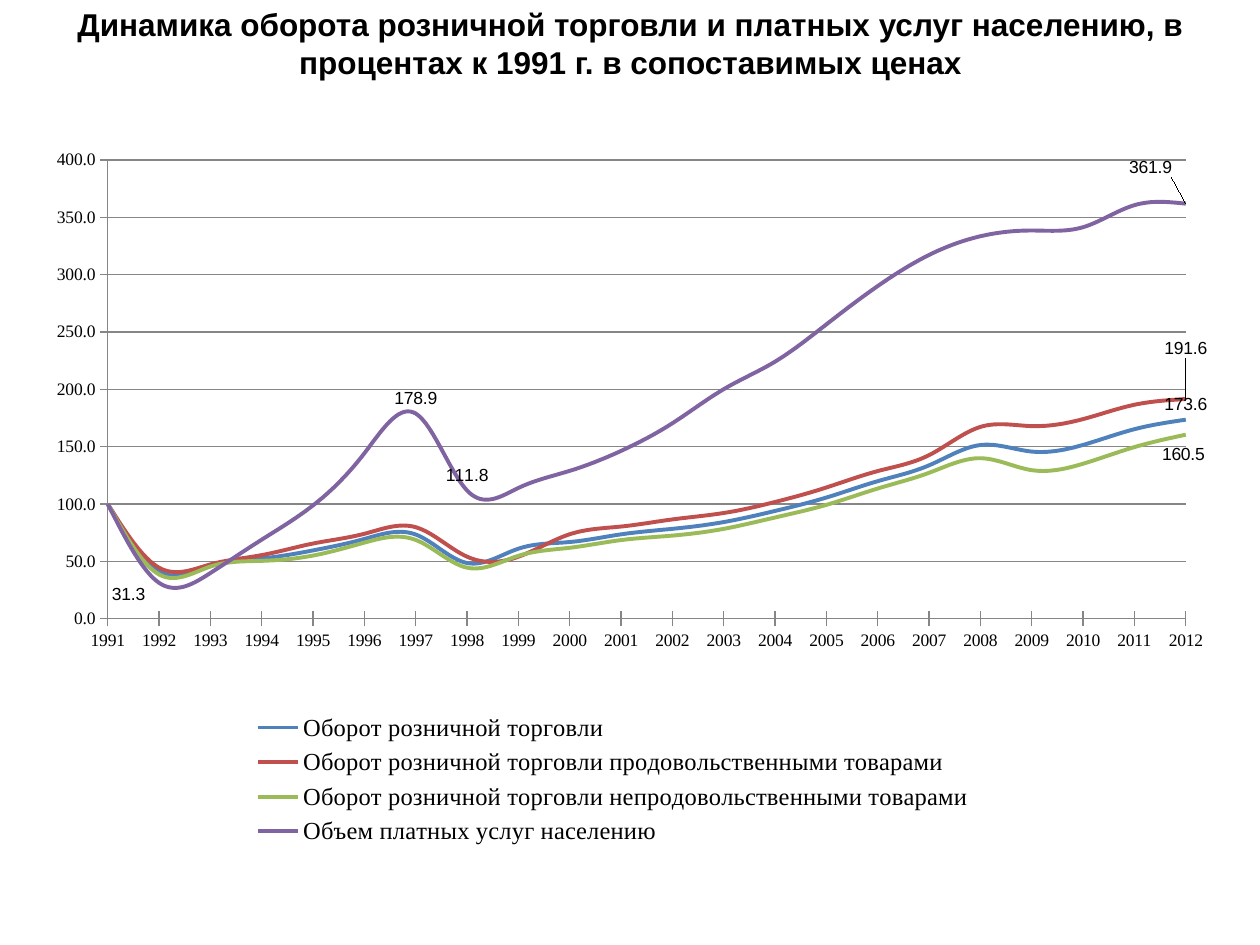
from lxml import etree
from pptx import Presentation, util as u
from pptx.chart.data import CategoryChartData
from pptx.dml.color import RGBColor
from pptx.enum import chart as ch, text
from pptx.oxml.ns import qn

HEADING = ("Динамика оборота розничной торговли и платных услуг населению, "
           "в процентах к 1991 г. в сопоставимых ценах")
YEARS = [str(year) for year in range(1991, 2013)]
ABOVE, BELOW = ch.XL_LABEL_POSITION.ABOVE, ch.XL_LABEL_POSITION.BELOW
INDICATORS = [
    {"name": "Оборот розничной торговли", "color": "4F81BD",
     "values": [100, 41.1, 46.3, 52.6, 59.6, 69.6, 73.4, 48.6, 61.1, 66.9, 73.6,
                78.4, 84.3, 94, 105.7, 120, 133.8, 151.5, 145.8, 151.6, 165.3, 173.6],
     "labels": {"2012": (ABOVE, 0, 0)}},
    {"name": "Оборот розничной торговли продовольственными товарами", "color": "C0504D",
     "values": [100, 44.5, 47.4, 55.5, 65.6, 74.1, 79.8, 54.1, 54.1, 73.7, 80.4,
                86.6, 92.2, 101.8, 114.5, 128.8, 142.7, 167.3, 168, 174.1, 186.6, 191.6],
     "labels": {"2012": (ABOVE, 0, -36)}},
    {"name": "Оборот розничной торговли непродовольственными товарами", "color": "9BBB59",
     "values": [100, 38.6, 45.5, 50.5, 55.1, 66.4, 68.7, 44.5, 54.9, 61.9, 68.6,
                72.5, 78.4, 88.3, 99.3, 113.6, 127.3, 140, 129.6, 135.2, 149.7, 160.5],
     "labels": {"2012": (BELOW, -3, 5)}},
    {"name": "Объем платных услуг населению", "color": "8064A2",
     "values": [100, 31.3, 39.9, 69, 98.9, 144.4, 178.9, 111.8, 114.1, 129, 146.4,
                170.5, 200.2, 224.2, 256.7, 290.1, 317.2, 333.5, 338.5, 341.4, 360.6, 361.9],
     "labels": {"1992": (BELOW, -30, -3), "1997": (ABOVE, 0, 0),
                "1998": (ABOVE, 0, 0), "2012": (ABOVE, -36, -21)}},
]
THEME = {
    "ink": "000000", "grid": "868686", "grid_width": 0.75, "curve_width": 2.25,
    "heading": {"name": "Arial", "size": u.Pt(18), "bold": True},
    "axis": {"name": "Times New Roman", "size": u.Pt(10)},
    "legend": {"name": "Times New Roman", "size": u.Pt(14)},
    "label": {"name": "Arial", "size": u.Pt(10)},
}
PX = u.Inches(1) // 126
SLIDE = (1260, 945)
HEADING_BOX = (25, -1, 1211, 89)
CHART_BOX = (15, 125, 1221, 745)
PLOT_BOX = (93, 35, 1078, 459)
LEGEND_BOX = (233, 582, 730, 145)


def apply(target, values):
    for key, value in values.items():
        setattr(target, key, value)


def style_font(font, role):
    apply(font, THEME[role])
    font.color.rgb = RGBColor.from_string(THEME["ink"])


def style_line(line, color, width):
    line.color.rgb = RGBColor.from_string(color)
    line.width = u.Pt(width)


def set_layout(parent, index, box, modes):
    for old in parent.findall(qn("c:layout")):
        parent.remove(old)
    layout = etree.Element(qn("c:layout"))
    manual = etree.SubElement(layout, qn("c:manualLayout"))
    sizes = dict(zip("xywh", (round(part / CHART_BOX[2 + i % 2], 3)
                             for i, part in enumerate(box))))
    for tag, value in {**modes, **sizes}.items():
        etree.SubElement(manual, qn(f"c:{tag}")).set("val", str(value))
    parent.insert(index, layout)


def start_on_axis(plot_area):
    value_axis = plot_area.find(qn("c:valAx"))
    for old in value_axis.findall(qn("c:crossBetween")):
        value_axis.remove(old)
    crossing = etree.Element(qn("c:crossBetween"))
    crossing.set("val", "midCat")
    value_axis.find(qn("c:crosses")).addnext(crossing)


def add_heading(slide):
    heading = slide.shapes.title
    apply(heading, dict(zip(("left", "top", "width", "height"),
                            (part * PX for part in HEADING_BOX))))
    frame = heading.text_frame
    frame.text = HEADING
    apply(frame, {"word_wrap": True, "vertical_anchor": text.MSO_ANCHOR.TOP,
                  "auto_size": text.MSO_AUTO_SIZE.SHAPE_TO_FIT_TEXT})
    paragraph = frame.paragraphs[0]
    paragraph.alignment = text.PP_ALIGN.CENTER
    style_font(paragraph.runs[0].font, "heading")


def style_curve(curve, indicator):
    curve.smooth = True
    style_line(curve.format.line, indicator["color"], THEME["curve_width"])
    curve.data_labels.show_value = False
    for year, (position, dx, dy) in indicator["labels"].items():
        index = YEARS.index(year)
        label = curve.points[index].data_label
        style_font(label.font, "label")
        label.position = position
        if dx or dy:
            node = curve._element.xpath(f".//c:dLbl[c:idx/@val='{index}']")[0]
            set_layout(node, 1, (dx, dy), {})


def add_dynamics(slide):
    data = CategoryChartData(number_format="0.0")
    data.categories = YEARS
    for indicator in INDICATORS:
        data.add_series(indicator["name"], indicator["values"])
    chart = slide.shapes.add_chart(
        ch.XL_CHART_TYPE.LINE, *(part * PX for part in CHART_BOX), data).chart
    chart.has_title = False
    style_font(chart.font, "axis")

    years, percents = chart.category_axis, chart.value_axis
    apply(percents, {"minimum_scale": 0, "maximum_scale": 400, "major_unit": 50,
                     "has_major_gridlines": True})
    apply(percents.tick_labels, {"number_format": "0.0", "number_format_is_linked": False})
    years.has_major_gridlines = False
    for axis in (years, percents):
        axis.major_tick_mark = ch.XL_TICK_MARK.CROSS
        style_font(axis.tick_labels.font, "axis")
    for line in (years.format.line, percents.format.line,
                 percents.major_gridlines.format.line):
        style_line(line, THEME["grid"], THEME["grid_width"])

    plot_area = chart._chartSpace.xpath(".//c:plotArea")[0]
    start_on_axis(plot_area)
    modes = {"xMode": "edge", "yMode": "edge"}
    set_layout(plot_area, 0, PLOT_BOX, {"layoutTarget": "inner", **modes})

    chart.has_legend = True
    apply(chart.legend, {"position": ch.XL_LEGEND_POSITION.BOTTOM,
                         "include_in_layout": False})
    style_font(chart.legend.font, "legend")
    set_layout(chart.legend._element, 1, LEGEND_BOX, modes)

    for curve, indicator in zip(chart.plots[0].series, INDICATORS):
        style_curve(curve, indicator)


def main():
    deck = Presentation()
    deck.slide_width, deck.slide_height = (part * PX for part in SLIDE)
    slide = deck.slides.add_slide(deck.slide_layouts[5])
    add_dynamics(slide)
    add_heading(slide)
    deck.save("out.pptx")


if __name__ == "__main__":
    main()
